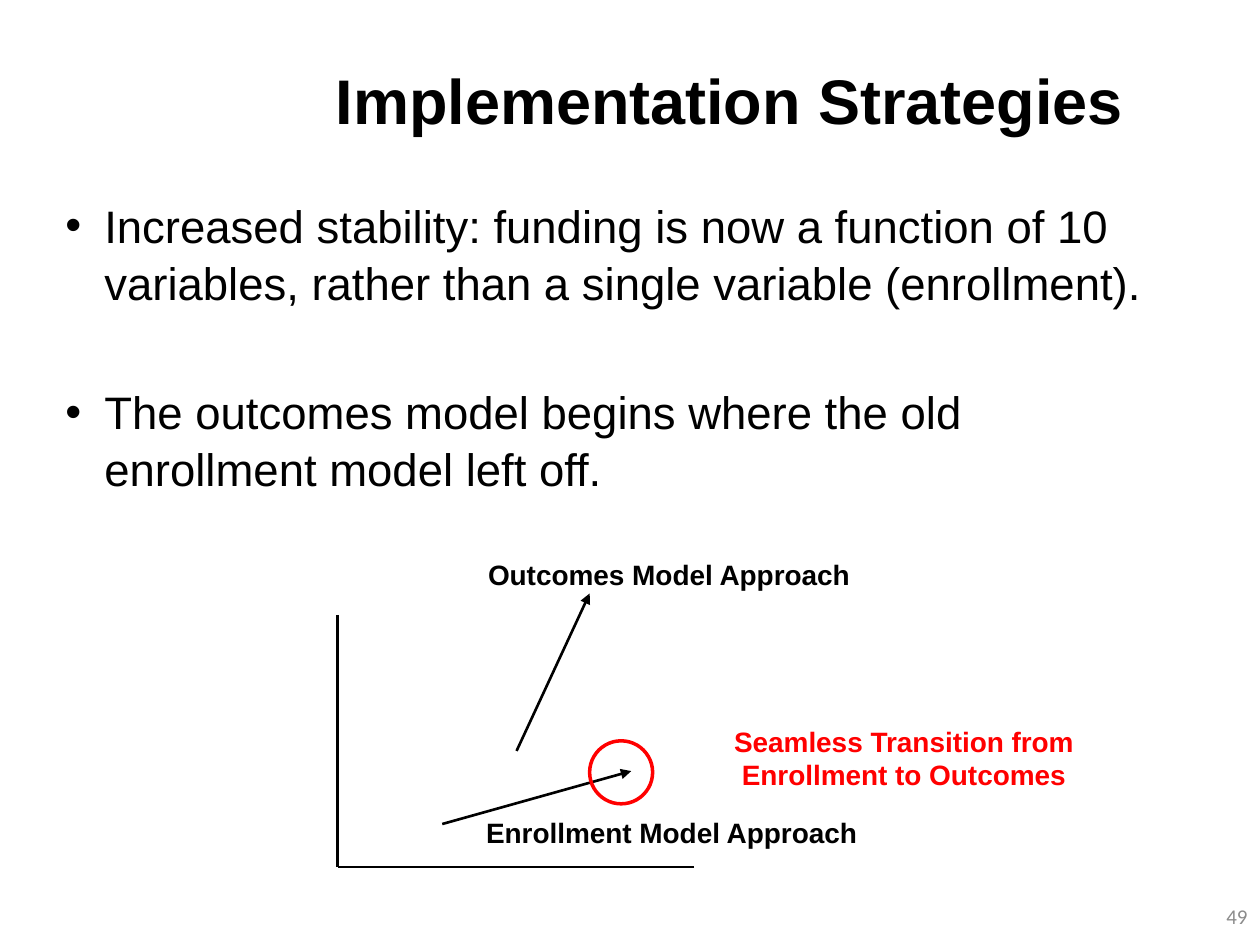
import pptx
import pptx.util
import pptx.dml.color
import pptx.enum.shapes
import pptx.enum.text
import lxml.etree

Inches = pptx.util.Inches
Pt = pptx.util.Pt
RGBColor = pptx.dml.color.RGBColor
ALIGN = pptx.enum.text.PP_ALIGN
ANCHOR = pptx.enum.text.MSO_ANCHOR
qn = pptx.oxml.ns.qn

BLACK = RGBColor(0x00, 0x00, 0x00)
RED = RGBColor(0xFF, 0x00, 0x00)
GRAY = RGBColor(0x8C, 0x8C, 0x8C)

deck = pptx.Presentation()
deck.slide_width = Inches(10)
deck.slide_height = Inches(7.5)
page = deck.slides.add_slide(deck.slide_layouts[6])


def add_text(place, lines, align, anchor, size, color, bold, font_name="Arial"):
    box = page.shapes.add_textbox(*[Inches(value) for value in place])
    frame = box.text_frame
    frame.word_wrap = True
    frame.vertical_anchor = anchor
    frame.text = "\n".join(lines)
    font_format = {"name": font_name, "size": Pt(size), "bold": bold}
    for para in frame.paragraphs:
        para.alignment = align
        for span in para.runs:
            for key, value in font_format.items():
                setattr(span.font, key, value)
            span.font.color.rgb = color
    return frame


bullets = [
    "Increased stability: funding is now a function of 10 variables, "
    "rather than a single variable (enrollment).",
    "The outcomes model begins where the old enrollment model left off.",
]
body = add_text((0.42, 1.5, 8.83, 2.83), bullets, ALIGN.LEFT, ANCHOR.TOP, 26, BLACK, False)
for index, para in enumerate(body.paragraphs):
    para.line_spacing = 1.05
    para.space_before = Pt(41 * index)
    properties = para._p.get_or_add_pPr()
    properties.set("marL", str(Inches(0.31)))
    properties.set("indent", str(Inches(-0.31)))
    lxml.etree.SubElement(properties, qn("a:buFont")).set("typeface", "Arial")
    lxml.etree.SubElement(properties, qn("a:buChar")).set("char", "•")

strokes = [
    ((2.68, 4.88), (2.68, 6.88), False),
    ((5.51, 6.88), (2.68, 6.88), False),
    ((3.51, 6.54), (5.01, 6.12), True),
    ((4.1, 5.96), (4.68, 4.71), True),
]
for start, end, has_arrow in strokes:
    stroke = page.shapes.add_connector(
        pptx.enum.shapes.MSO_CONNECTOR.STRAIGHT,
        *[Inches(value) for value in start + end],
    )
    stroke.line.color.rgb = BLACK
    stroke.line.width = Pt(1.5)
    if has_arrow:
        outline = stroke.line._get_or_add_ln()
        lxml.etree.SubElement(outline, qn("a:tailEnd")).set("type", "triangle")
    lxml.etree.SubElement(stroke._element.spPr, qn("a:effectLst"))

circle = page.shapes.add_shape(
    pptx.enum.shapes.MSO_SHAPE.OVAL,
    Inches(4.68), Inches(5.88), Inches(0.5), Inches(0.5),
)
circle.shadow.inherit = False
circle.fill.background()
circle.line.color.rgb = RED
circle.line.width = Pt(2)

labels = [
    ((3.76, 6.42, 3.33, 0.37), "Enrollment Model Approach", ALIGN.LEFT, BLACK),
    ((3.6, 4.38, 3.42, 0.37), "Outcomes Model Approach", ALIGN.CENTER, BLACK),
    ((5.51, 5.7, 3.33, 0.64), "Seamless Transition from Enrollment to Outcomes", ALIGN.CENTER, RED),
]
for place, label, align, color in labels:
    add_text(place, [label], align, ANCHOR.TOP, 16, color, True)

add_text((7.67, 7.07, 2.33, 0.4), ["49"], ALIGN.RIGHT, ANCHOR.MIDDLE, 12, GRAY, False, "Calibri")
add_text((1.58, 0.5, 8.42, 0.58), ["Implementation Strategies"], ALIGN.CENTER, ANCHOR.MIDDLE, 36, BLACK, True)

deck.save("out.pptx")
